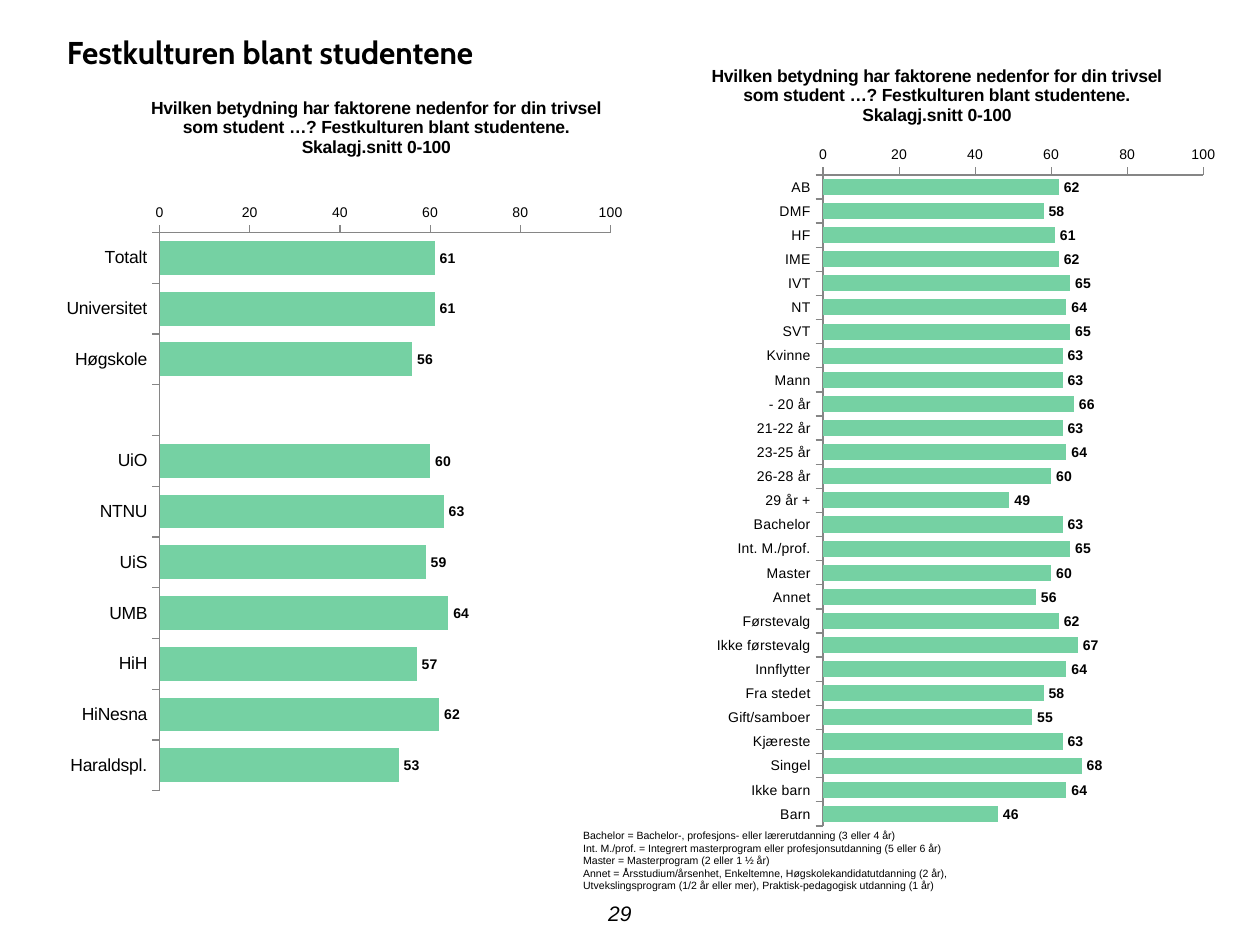
from lxml import etree
from pptx import Presentation
from pptx.chart.data import CategoryChartData
from pptx.dml.color import RGBColor
from pptx.enum.chart import XL_CHART_TYPE, XL_LABEL_POSITION, XL_TICK_MARK
from pptx.enum.text import MSO_ANCHOR, PP_ALIGN
from pptx.oxml.ns import qn
from pptx.util import Inches, Pt

COLORS = {"text": "000000", "bar": "75D1A3", "axis": "868686"}
TITLE = "Festkulturen blant studentene"
PAGE_NUMBER = "29"
QUESTION = ("Hvilken betydning har faktorene nedenfor for din trivsel som student …? "
            "Festkulturen blant studentene. Skalagj.snitt 0-100")
INSTITUTIONS = [
    ("Totalt", 61), ("Universitet", 61), ("Høgskole", 56), ("", None),
    ("UiO", 60), ("NTNU", 63), ("UiS", 59), ("UMB", 64), ("HiH", 57),
    ("HiNesna", 62), ("Haraldspl.", 53),
]
GROUPS = [
    ("AB", 62), ("DMF", 58), ("HF", 61), ("IME", 62), ("IVT", 65), ("NT", 64),
    ("SVT", 65), ("Kvinne", 63), ("Mann", 63), ("- 20 år", 66),
    ("21-22 år", 63), ("23-25 år", 64), ("26-28 år", 60), ("29 år +", 49),
    ("Bachelor", 63), ("Int. M./prof.", 65), ("Master", 60), ("Annet", 56),
    ("Førstevalg", 62), ("Ikke førstevalg", 67), ("Innflytter", 64),
    ("Fra stedet", 58), ("Gift/samboer", 55), ("Kjæreste", 63),
    ("Singel", 68), ("Ikke barn", 64), ("Barn", 46),
]
# Boxes are in inches; plot and title places are fractions of the chart.
CHARTS = [
    {"rows": INSTITUTIONS, "box": (0.43, 0.68, 4.65, 5.83), "category_size": 10,
     "plot": (0.18, 0.2, 0.77, 0.76), "title": (0.16, 0.01)},
    {"rows": GROUPS, "box": (5, 0.29, 4.79, 6.46), "category_size": 8,
     "plot": (0.32, 0.17, 0.63, 0.8), "title": (0.13, 0.03)},
]
NOTES = [
    "Bachelor = Bachelor-, profesjons- eller lærerutdanning (3 eller 4 år)",
    "Int. M./prof. = Integrert masterprogram eller profesjonsutdanning (5 eller 6 år)",
    "Master = Masterprogram (2 eller 1 ½ år)",
    "Annet = Årsstudium/årsenhet, Enkeltemne, Høgskolekandidatutdanning (2 år), "
    "Utvekslingsprogram (1/2 år eller mer), Praktisk-pedagogisk utdanning (1 år)",
]


def rgb(name):
    return RGBColor.from_string(COLORS[name])


def format_font(font, size, name="Arial", **styles):
    values = {"size": Pt(size), "name": name, "bold": False, "italic": False, **styles}
    for attribute, value in values.items():
        setattr(font, attribute, value)
    font.color.rgb = rgb("text")


def place(shape, box):
    for attribute, value in zip(("left", "top", "width", "height"), box):
        setattr(shape, attribute, Inches(value))


def set_layout(parent, after, fractions, inner=False):
    """Give a chart part a manual layout, put right after the named child if any."""
    for old in parent.findall(qn("c:layout")):
        parent.remove(old)
    layout = etree.Element(qn("c:layout"))
    manual = etree.SubElement(layout, qn("c:manualLayout"))
    settings = [("layoutTarget", "inner")] if inner else []
    settings += [("xMode", "edge"), ("yMode", "edge")]
    settings += zip("xywh", fractions)
    for tag, value in settings:
        etree.SubElement(manual, qn(f"c:{tag}")).set("val", str(value))
    if after:
        parent.find(qn(after)).addnext(layout)
    else:
        parent.insert(0, layout)


def format_axis(axis, size):
    axis.has_major_gridlines = False
    axis.major_tick_mark = XL_TICK_MARK.OUTSIDE
    axis.minor_tick_mark = XL_TICK_MARK.NONE
    axis.format.line.color.rgb = rgb("axis")
    axis.format.line.width = Pt(0.75)
    format_font(axis.tick_labels.font, size)


def add_bar_chart(slide, rows, box, category_size, plot, title):
    data = CategoryChartData(number_format="0")
    data.categories = [label for label, _ in rows]
    data.add_series("Series 1", [value for _, value in rows])
    chart = slide.shapes.add_chart(
        XL_CHART_TYPE.BAR_CLUSTERED, *map(Inches, box), data).chart
    format_font(chart.font, 18)
    chart.has_legend = False

    chart.has_title = True
    chart.chart_title.include_in_layout = True
    paragraph = chart.chart_title.text_frame.paragraphs[0]
    run = paragraph.add_run()
    run.text = QUESTION
    format_font(run.font, 10, bold=True)
    chart_element = chart.element.find(qn("c:chart"))
    set_layout(chart_element.find(qn("c:title")), "c:tx", title)
    set_layout(chart_element.find(qn("c:plotArea")), None, plot, inner=True)

    format_axis(chart.category_axis, category_size)
    chart.category_axis.reverse_order = True
    value_axis = chart.value_axis
    format_axis(value_axis, 8)
    value_axis.minimum_scale, value_axis.maximum_scale = 0, 100
    value_axis.major_unit = 20
    value_axis.tick_labels.number_format = "0"
    value_axis.tick_labels.number_format_is_linked = False

    bars = chart.plots[0]
    bars.gap_width = 50
    bars.vary_by_categories = False
    series = bars.series[0]
    series.format.fill.solid()
    series.format.fill.fore_color.rgb = rgb("bar")
    labels = series.data_labels
    labels.show_value = True
    labels.position = XL_LABEL_POSITION.OUTSIDE_END
    labels.number_format = "0"
    labels.number_format_is_linked = False
    format_font(labels.font, 8, bold=True)


def add_text(slide, lines, box, size, wrap=True, align=PP_ALIGN.LEFT,
             anchor=MSO_ANCHOR.TOP, **styles):
    frame = slide.shapes.add_textbox(*map(Inches, box)).text_frame
    frame.word_wrap = wrap
    frame.vertical_anchor = anchor
    frame.text = "\n".join(lines)
    for paragraph in frame.paragraphs:
        paragraph.alignment = align
        format_font(paragraph.runs[0].font, size, **styles)


def main():
    presentation = Presentation()
    presentation.slide_width, presentation.slide_height = Inches(10), Inches(7.5)
    slide = presentation.slides.add_slide(presentation.slide_layouts[5])

    title = slide.shapes.title
    place(title, (0.43, 0.21, 9.17, 0.4))
    title.text_frame.text = TITLE
    title.text_frame.vertical_anchor = MSO_ANCHOR.MIDDLE
    paragraph = title.text_frame.paragraphs[0]
    paragraph.alignment = PP_ALIGN.LEFT
    format_font(paragraph.runs[0].font, 18, name="Cabin", bold=True)

    for chart in CHARTS:
        add_bar_chart(slide, **chart)
    add_text(slide, NOTES, (4.53, 6.53, 3.15, 0.61), 6)
    add_text(slide, [PAGE_NUMBER], (4.64, 7.08, 0.56, 0.33), 12, wrap=False,
             align=PP_ALIGN.CENTER, anchor=MSO_ANCHOR.MIDDLE, italic=True)
    presentation.save("out.pptx")


if __name__ == "__main__":
    main()
